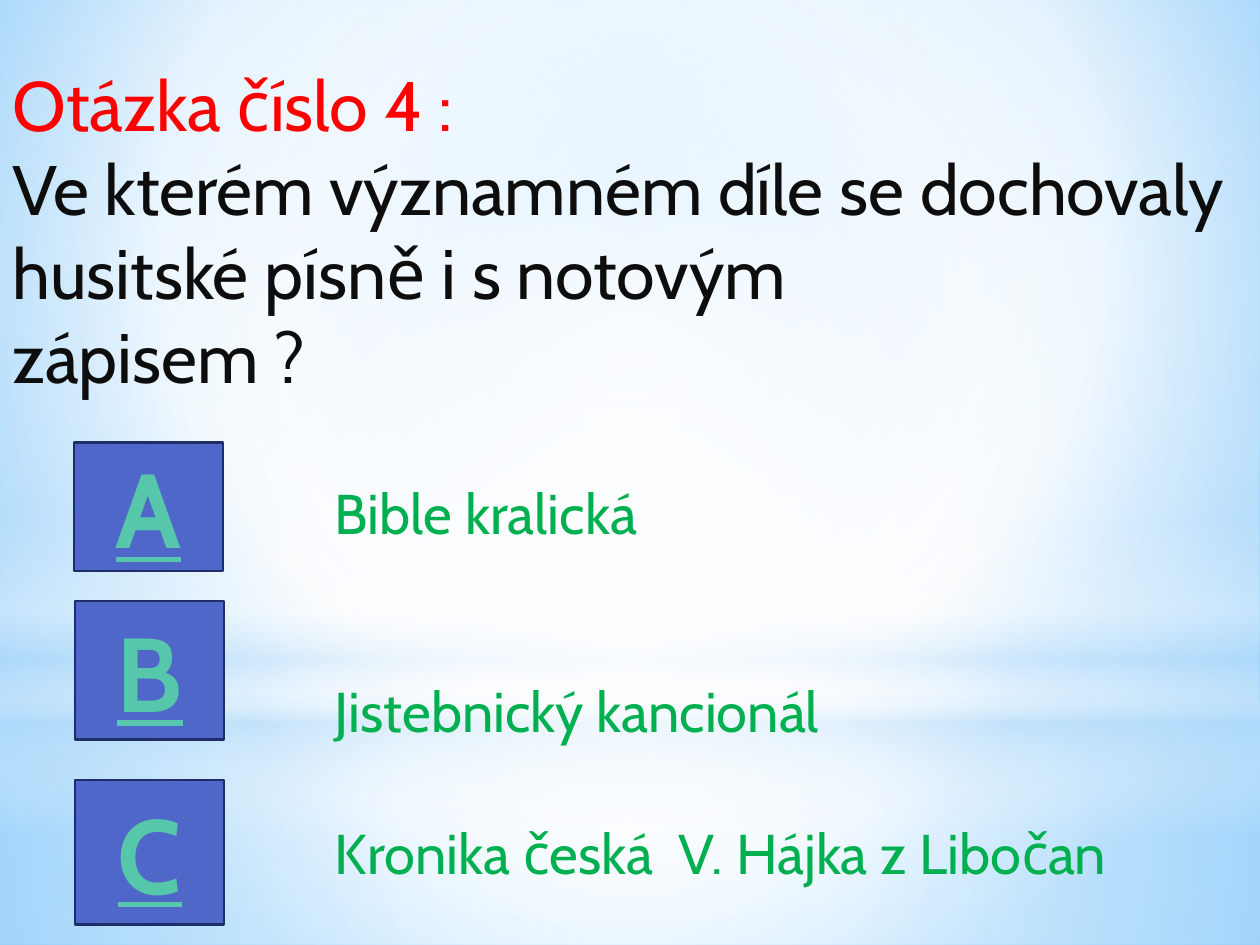
from lxml.etree import SubElement
from pptx import Presentation
from pptx.dml.color import RGBColor
from pptx.enum.shapes import MSO_SHAPE
from pptx.enum.text import MSO_ANCHOR, MSO_AUTO_SIZE, PP_ALIGN
from pptx.oxml.ns import qn
from pptx.util import Cm, Pt

WIDE, HIGH = 25.4, 19.05
FONT = "Cabin"
HEX = {
    "white": "FFFFFF", "pale": "B4DCFA", "sky": "9ED5FF", "deep": "5BB9FF",
    "red": "FF0000", "ink": "0D0D0D", "green": "00B050",
    "blue": "4E67C8", "navy": "1F2E69", "mint": "56C7AA",
}


def color(name):
    return RGBColor.from_string(HEX[name])


def blend(fill, root, stops, focus=None, angle=90):
    """Fill with (position, colour, opacity) stops in percent.

    The gradient is circular around focus (left, top, right, bottom),
    or linear at angle when there is no focus.
    """
    fill.gradient()
    grad = next(root.iter(qn("a:gradFill")))
    for child in list(grad):
        grad.remove(child)
    group = SubElement(grad, qn("a:gsLst"))
    for pos, name, alpha in stops:
        stop = SubElement(group, qn("a:gs"), pos=str(pos * 1000))
        tint = SubElement(stop, qn("a:srgbClr"), val=HEX[name])
        if alpha < 100:
            SubElement(tint, qn("a:alpha"), val=str(alpha * 1000))
    if focus:
        ring = SubElement(grad, qn("a:path"), path="circle")
        sides = {side: str(n * 1000) for side, n in zip("ltrb", focus)}
        SubElement(ring, qn("a:fillToRect"), **sides)
    else:
        SubElement(grad, qn("a:lin"), ang=str(angle * 60000), scaled="0")


def write(frame, text, size=32, tone="green", bold=False, under=False,
          align=PP_ALIGN.LEFT):
    """Append text to the first paragraph; a newline is a line break."""
    para = frame.paragraphs[0]
    para.alignment = align
    for i, line in enumerate(text.split("\n")):
        if i:
            para.add_line_break()
        if line:
            run = para.add_run()
            run.text = line
            font = run.font
            font.name, font.size = FONT, Pt(size)
            font.bold, font.underline = bold, under
            font.color.rgb = color(tone)


def add_form(slide, kind, box):
    form = slide.shapes.add_shape(kind, *map(Cm, box))
    form.shadow.inherit = False
    return form


def add_text(slide, box):
    frame = slide.shapes.add_textbox(*map(Cm, box)).text_frame
    frame.word_wrap = True
    frame.auto_size = MSO_AUTO_SIZE.SHAPE_TO_FIT_TEXT
    return frame


def add_sky(slide, box):
    left, top, width, height = box
    blend(slide.background.fill, slide.element,
          [(0, "sky", 100), (60, "white", 100), (100, "deep", 100)],
          (20, 10, 20, 60))
    rect, mid, split = MSO_SHAPE.RECTANGLE, (50,) * 4, 14.17
    layers = [
        (rect, split, height - split, mid,
         [(0, "white", 91), (37, "white", 76), (100, "pale", 79)]),
        (rect, 0, split, mid,
         [(0, "white", 89), (48, "white", 62), (100, "pale", 79)]),
        (rect, 10.46, 6.35, None,
         [(0, "white", 0), (29, "white", 30), (45, "pale", 40),
          (55, "white", 26), (65, "pale", 60), (100, "white", 0)]),
        (MSO_SHAPE.OVAL, 4.45, split, mid,
         [(0, "white", 100), (56, "white", 0)]),
    ]
    for kind, y, tall, focus, stops in layers:
        form = add_form(slide, kind, (left, top + y, width, tall))
        form.line.fill.background()
        blend(form.fill, form.element, stops, focus)


def add_question(slide, box):
    frame = add_text(slide, box)
    write(frame, "Otázka číslo 4 :\n", size=40, tone="red")
    write(frame, "Ve kterém významném díle se dochovaly husitské písně "
          "i s notovým\nzápisem ?", size=40, tone="ink")


def add_answer(slide, box, letter, text, drop, span):
    """Lettered button filling the box; its answer starts drop below the top."""
    left, top, width, height = box
    key = add_form(slide, MSO_SHAPE.RECTANGLE, box)
    key.fill.solid()
    key.fill.fore_color.rgb = color("blue")
    key.line.color.rgb = color("navy")
    key.line.width = Pt(1.25)
    key.text_frame.vertical_anchor = MSO_ANCHOR.MIDDLE
    write(key.text_frame, letter, size=60, tone="mint", bold=True,
          under=True, align=PP_ALIGN.CENTER)
    write(add_text(slide, (6.5, top + drop, span, 1.63)), text)


def main():
    deck = Presentation()
    deck.slide_width, deck.slide_height = Cm(WIDE), Cm(HIGH)
    slide = deck.slides.add_slide(deck.slide_layouts[6])
    add_sky(slide, (0, 0, WIDE, HIGH))
    add_question(slide, (0, 1.12, WIDE, 7.09))
    answers = [
        ((1.5, 8.92, 3, 2.59), "A", "Bible kralická", 0.61, 13),
        ((1.52, 12.12, 3, 2.79), "B", "Jistebnický kancionál", 1.39, 12.6),
        ((1.52, 15.72, 3, 2.92), "C", "Kronika česká  V. Hájka z Libočan",
         0.66, 18.9),
    ]
    for answer in answers:
        add_answer(slide, *answer)
    deck.save("out.pptx")


if __name__ == "__main__":
    main()
